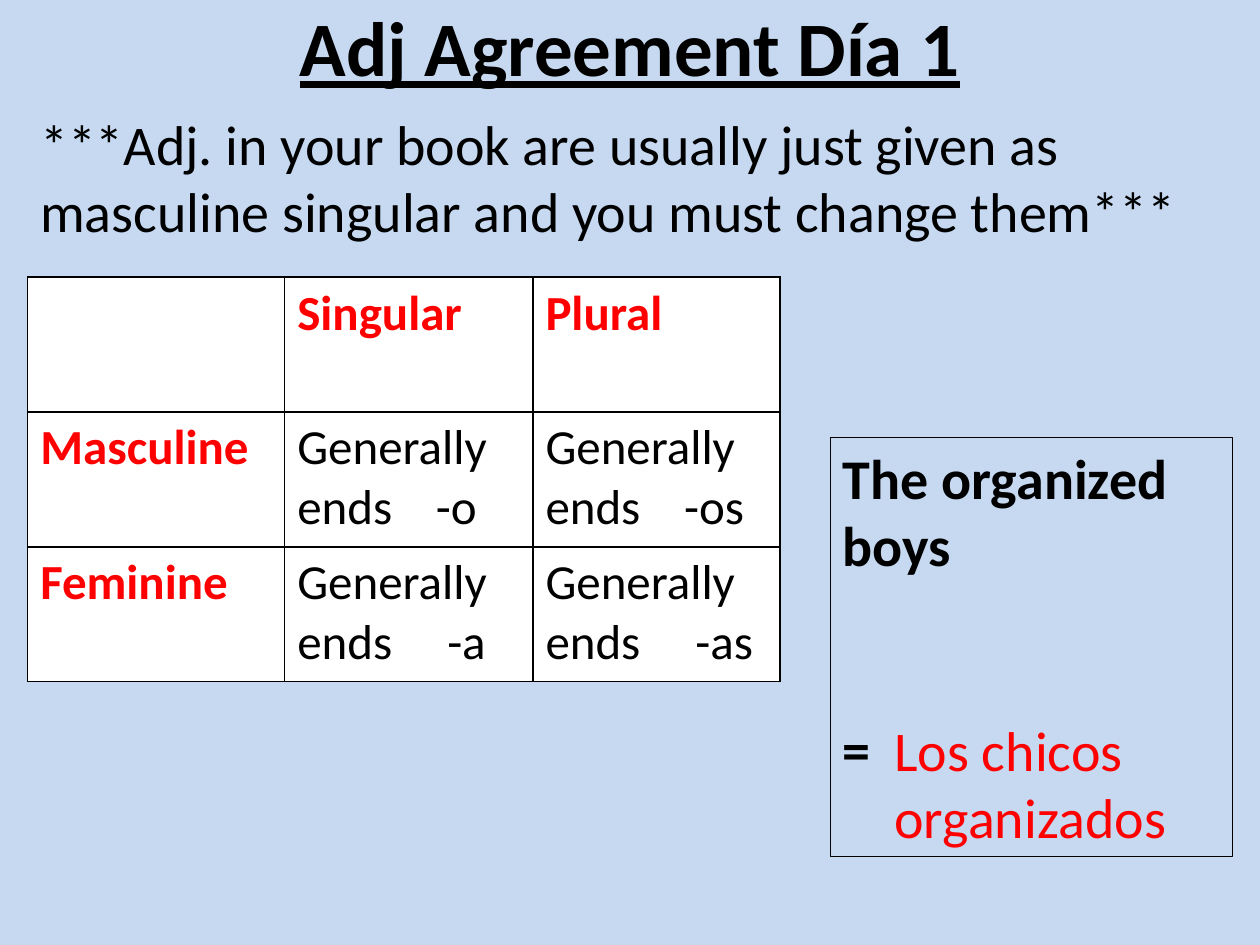
"""Build the slide on Spanish adjective agreement."""
import lxml.etree
import pptx
import pptx.dml.color
import pptx.enum.shapes
import pptx.enum.text
import pptx.oxml.ns
import pptx.util

Inches, Pt = pptx.util.Inches, pptx.util.Pt
RGBColor = pptx.dml.color.RGBColor
PP_ALIGN = pptx.enum.text.PP_ALIGN
MSO_ANCHOR = pptx.enum.text.MSO_ANCHOR

BLACK = RGBColor(0x00, 0x00, 0x00)
RED = RGBColor(0xFF, 0x00, 0x00)
WHITE = RGBColor(0xFF, 0xFF, 0xFF)
PALE_BLUE = RGBColor(0xC6, 0xD9, 0xF1)

HEADING = "Adj Agreement Día 1"
REMINDER = ("***Adj. in your book are usually just given as masculine singular "
            "and you must change them***")
ENDINGS = [
    ["", "Singular", "Plural"],
    ["Masculine", "Generally ends\t-o", "Generally ends\t-os"],
    ["Feminine", "Generally ends\t-a", "Generally ends\t-as"],
]
ENDING_STOPS = [0, 1.1, 1.19]
ENGLISH = "The organized boys"
EQUALS = "="
SPANISH = "Los chicos organizados"

WIDTH, HEIGHT = 10, 7.5
LEFT = 0.22
TABLE_TOP = 2.2
COLUMN_WIDTHS = [2.04, 1.97, 1.96]
ROW_HEIGHT = 1.07
EXAMPLE_LEFT, EXAMPLE_TOP, EXAMPLE_RIGHT, EXAMPLE_BOTTOM = 6.59, 3.47, 9.78, 6.8
ANSWER_LEFT, ANSWER_TOP = 7, 5.63


def write(frame, text, size=32, color=BLACK, bold=False, underline=False,
          align=PP_ALIGN.LEFT, anchor=MSO_ANCHOR.TOP, before=0, tab=0, add=False):
    """Write one formatted paragraph into a text frame."""
    frame.word_wrap = True
    frame.vertical_anchor = anchor
    paragraph = frame.add_paragraph() if add else frame.paragraphs[0]
    paragraph.alignment = align
    paragraph.space_before = Pt(before)
    if tab:
        stops = lxml.etree.SubElement(
            paragraph._p.get_or_add_pPr(), pptx.oxml.ns.qn("a:tabLst"))
        lxml.etree.SubElement(stops, pptx.oxml.ns.qn("a:tab"),
                              pos=str(Inches(tab)), algn="l")
    run = paragraph.add_run()
    run.text = text
    font = run.font
    font.name, font.size, font.bold, font.underline = "Calibri", Pt(size), bold, underline
    font.color.rgb = color


def outline(cell):
    """Draw a thin black border on every side of a cell."""
    for side in "LRTB":
        line = lxml.etree.SubElement(
            cell._tc.get_or_add_tcPr(), pptx.oxml.ns.qn(f"a:ln{side}"), w=str(Pt(1)))
        fill = lxml.etree.SubElement(line, pptx.oxml.ns.qn("a:solidFill"))
        lxml.etree.SubElement(fill, pptx.oxml.ns.qn("a:srgbClr"), val=str(BLACK))


def add_endings(slide):
    """Add the table of adjective endings."""
    table = slide.shapes.add_table(
        len(ENDINGS), len(COLUMN_WIDTHS), Inches(LEFT), Inches(TABLE_TOP),
        Inches(sum(COLUMN_WIDTHS)), Inches(ROW_HEIGHT * len(ENDINGS))).table
    for column, width in zip(table.columns, COLUMN_WIDTHS):
        column.width = Inches(width)
    for r, labels in enumerate(ENDINGS):
        table.rows[r].height = Inches(ROW_HEIGHT)
        for c, label in enumerate(labels):
            cell = table.cell(r, c)
            outline(cell)
            cell.fill.solid()
            cell.fill.fore_color.rgb = WHITE
            header = r == 0 or c == 0
            if label:
                write(cell.text_frame, label, size=28, bold=header,
                      color=RED if header else BLACK,
                      tab=0 if header else ENDING_STOPS[r])


def main():
    """Lay out the slide and save it."""
    deck = pptx.Presentation()
    deck.slide_width, deck.slide_height = Inches(WIDTH), Inches(HEIGHT)
    slide = deck.slides.add_slide(deck.slide_layouts[5])
    slide.background.fill.solid()
    slide.background.fill.fore_color.rgb = PALE_BLUE

    heading = slide.shapes.title
    heading.left, heading.top = Inches(0), Inches(-0.31)
    heading.width, heading.height = Inches(WIDTH), Inches(1.35)
    write(heading.text_frame, HEADING, size=44, bold=True, underline=True,
          align=PP_ALIGN.CENTER, anchor=MSO_ANCHOR.MIDDLE)

    reminder = slide.shapes.add_textbox(
        Inches(LEFT), Inches(0.82), Inches(WIDTH - LEFT), Inches(1.38))
    write(reminder.text_frame, REMINDER)

    add_endings(slide)

    example = slide.shapes.add_shape(
        pptx.enum.shapes.MSO_SHAPE.RECTANGLE, Inches(EXAMPLE_LEFT), Inches(EXAMPLE_TOP),
        Inches(EXAMPLE_RIGHT - EXAMPLE_LEFT), Inches(EXAMPLE_BOTTOM - EXAMPLE_TOP))
    example.shadow.inherit = False
    example.fill.background()
    example.line.color.rgb = BLACK
    example.line.width = Pt(0.75)
    write(example.text_frame, ENGLISH, bold=True)
    write(example.text_frame, EQUALS, bold=True, before=78, add=True)

    answer = slide.shapes.add_textbox(
        Inches(ANSWER_LEFT), Inches(ANSWER_TOP),
        Inches(EXAMPLE_RIGHT - ANSWER_LEFT), Inches(EXAMPLE_BOTTOM - ANSWER_TOP))
    write(answer.text_frame, SPANISH, color=RED)

    deck.save("out.pptx")


if __name__ == "__main__":
    main()
